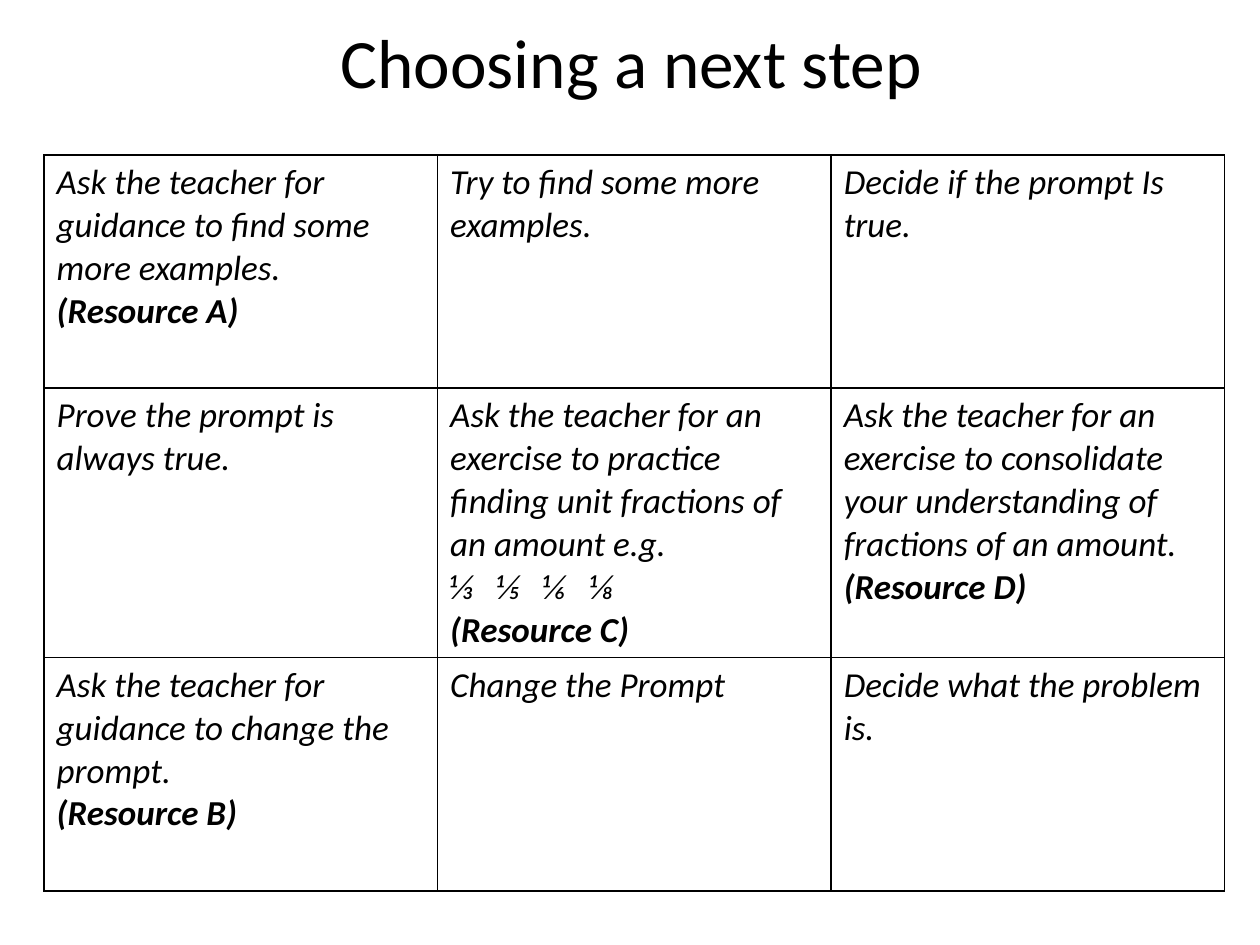
from dataclasses import dataclass

from lxml import etree
from pptx import Presentation
from pptx.dml.color import RGBColor
from pptx.enum.text import MSO_ANCHOR, PP_ALIGN
from pptx.oxml.ns import qn
from pptx.util import Inches, Pt

CENTER = PP_ALIGN.CENTER
MIDDLE = MSO_ANCHOR.MIDDLE


@dataclass(frozen=True)
class Theme:
    font: str = "Calibri"
    ink: str = "000000"
    title_size: float = 39.6
    cell_size: float = 20
    border: float = 1


THEME = Theme()
FRACTIONS = "⅓\t⅕\t⅙\t⅛"
FRACTION_GAP = 0.37

# Each cell is a list of paragraphs
STEPS = [
    [
        ["Ask the teacher for guidance to find some more examples.", "(Resource A)"],
        ["Try to find some more examples."],
        ["Decide if the prompt Is true."],
    ],
    [
        ["Prove the prompt is always true."],
        ["Ask the teacher for an exercise to practice finding unit fractions of an amount e.g.",
         FRACTIONS, "(Resource C)"],
        ["Ask the teacher for an exercise to consolidate your understanding of fractions of an amount.",
         "(Resource D)"],
    ],
    [
        ["Ask the teacher for guidance to change the prompt.", "(Resource B)"],
        ["Change the Prompt"],
        ["Decide what the problem is."],
    ],
]


def style(paragraph, size, bold=False, italic=False):
    for run in paragraph.runs:
        run.font.name = THEME.font
        run.font.size = Pt(size)
        run.font.bold = bold
        run.font.italic = italic
        run.font.color.rgb = RGBColor.from_string(THEME.ink)


def outline(cell):
    properties = cell._tc.get_or_add_tcPr()
    for position, side in enumerate(("a:lnL", "a:lnR", "a:lnT", "a:lnB")):
        line = etree.Element(qn(side), w=str(Pt(THEME.border)))
        fill = etree.SubElement(line, qn("a:solidFill"))
        etree.SubElement(fill, qn("a:srgbClr"), val=THEME.ink)
        properties.insert(position, line)


prs = Presentation()
prs.slide_width, prs.slide_height = Inches(10), Inches(7.5)
slide = prs.slides.add_slide(prs.slide_layouts[6])

# Title
title = slide.shapes.add_textbox(Inches(0.51), Inches(0.13), Inches(9), Inches(0.71)).text_frame
title.word_wrap = True
title.vertical_anchor = MIDDLE
title.text = "Choosing a next step"
title.paragraphs[0].alignment = CENTER
style(title.paragraphs[0], THEME.title_size)

# Grid of next steps
row_heights = [1.85, 2.14, 1.85]
grid = slide.shapes.add_table(
    len(STEPS), len(STEPS[0]), Inches(0.35), Inches(1.23), Inches(9.37), Inches(sum(row_heights))
).table
grid.first_row = grid.horz_banding = False
for row, height in zip(grid.rows, row_heights):
    row.height = Inches(height)

for row, steps in zip(grid.rows, STEPS):
    for cell, lines in zip(row.cells, steps):
        cell.fill.background()
        outline(cell)
        cell.text_frame.text = "\n".join(lines)
        for paragraph, line in zip(cell.text_frame.paragraphs, lines):
            style(paragraph, THEME.cell_size, bold=line.startswith("(Resource"), italic=True)
            if line == FRACTIONS:
                # Evenly spaced tab stops
                stops = etree.SubElement(paragraph._p.get_or_add_pPr(), qn("a:tabLst"))
                for stop in range(1, len(line.split("\t"))):
                    etree.SubElement(stops, qn("a:tab"), pos=str(Inches(FRACTION_GAP * stop)), algn="l")

prs.save("out.pptx")
